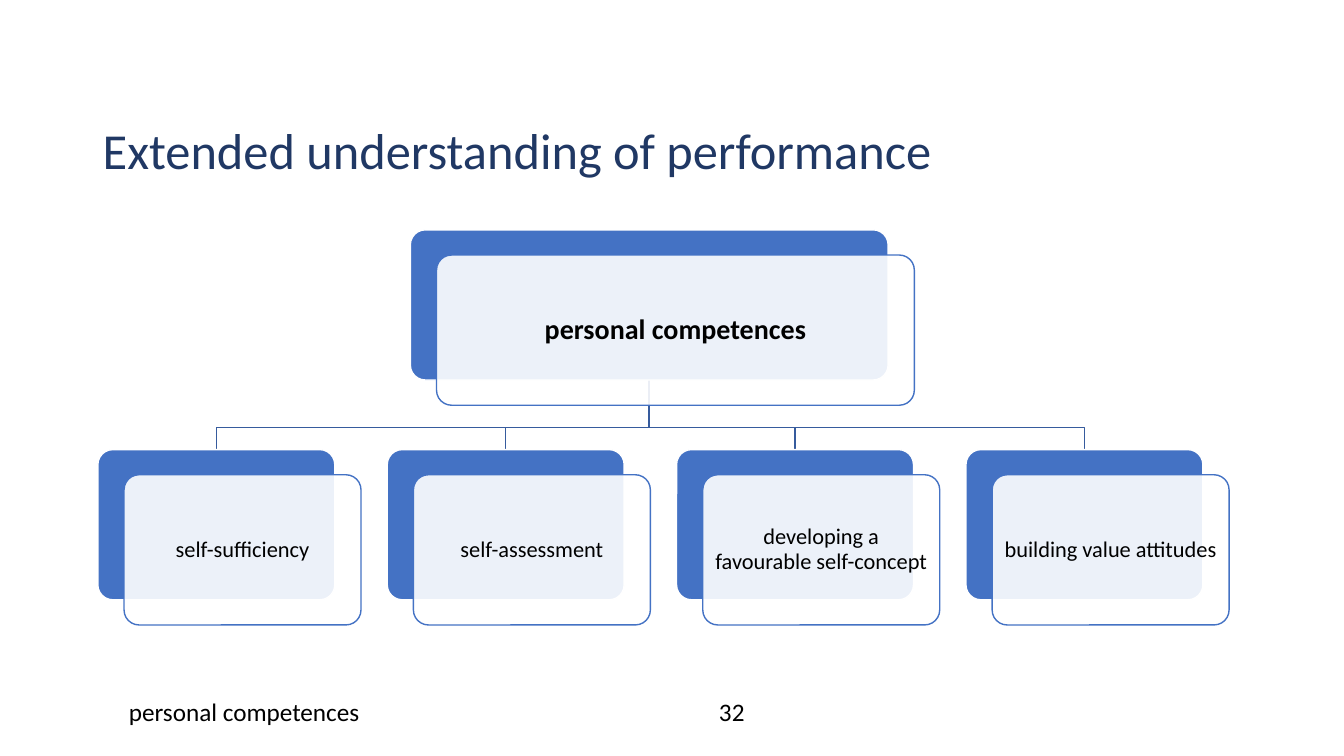
from dataclasses import dataclass

from lxml import etree
from pptx import Presentation, util as u
from pptx.dml.color import RGBColor
from pptx.enum import shapes, text
from pptx.oxml import ns


@dataclass(frozen=True)
class Theme:
    font: str = "Calibri"
    title: str = "203864"
    ink: str = "000000"
    accent: str = "4472C4"
    branch: str = "365B9D"
    paper: str = "FFFFFF"
    title_size: int = 36
    root_size: int = 20
    footer_size: int = 18
    leaf_size: int = 16
    panel_opacity: int = 90
    corner: float = 0.1
    line: int = 1


class SlideBuilder:
    """Draws on one slide; every length is a percentage of the slide's size."""

    def __init__(self, deck, theme):
        self.deck, self.theme = deck, theme
        self.page = deck.slides.add_slide(deck.slide_layouts[6])

    def x(self, share):
        return u.Emu(round(self.deck.slide_width * share / 100))

    def y(self, share):
        return u.Emu(round(self.deck.slide_height * share / 100))

    def area(self, left, top, width, height):
        return self.x(left), self.y(top), self.x(width), self.y(height)

    def set_words(self, frame, words, size, color, align, spacing=1.0, bold=False):
        frame.word_wrap = True
        para = frame.paragraphs[0]
        para.text = words
        para.alignment = align
        para.line_spacing = spacing
        para.font.name = self.theme.font
        para.font.size = u.Pt(size)
        para.font.bold = bold
        para.font.color.rgb = RGBColor.from_string(color)

    def label(self, area, words, size, color, align=text.PP_ALIGN.LEFT, spacing=1.0):
        box = self.page.shapes.add_textbox(*self.area(*area))
        self.set_words(box.text_frame, words, size, color, align, spacing)

    def outline(self, shape, color):
        shape.shadow.inherit = False
        shape.line.color.rgb = RGBColor.from_string(color)
        shape.line.width = u.Pt(self.theme.line)

    def rounded(self, area, fill, line):
        box = self.page.shapes.add_shape(
            shapes.MSO_SHAPE.ROUNDED_RECTANGLE, *self.area(*area))
        box.adjustments[0] = self.theme.corner
        box.fill.solid()
        box.fill.fore_color.rgb = RGBColor.from_string(fill)
        self.outline(box, line)
        return box

    def card(self, left, top, width, height, words, size, bold=False):
        """A solid block with a translucent text panel shifted over it."""
        theme = self.theme
        self.rounded((left, top, width, height), theme.accent, theme.paper)
        panel = self.rounded((left + SHIFT_X, top + SHIFT_Y, width, height),
                             theme.paper, theme.accent)
        # The first colour in the shape is its fill
        color = next(panel.element.iter(ns.qn("a:srgbClr")))
        etree.SubElement(color, ns.qn("a:alpha"), val=str(theme.panel_opacity * 1000))
        frame = panel.text_frame
        frame.margin_left = frame.margin_right = u.Inches(0.07)
        frame.margin_top = frame.margin_bottom = u.Inches(0.07)
        frame.vertical_anchor = text.MSO_ANCHOR.MIDDLE
        self.set_words(frame, words, size, theme.ink, text.PP_ALIGN.CENTER, 0.9, bold)

    def branch(self, start, bend, end):
        """An elbow line that runs down, across at the bend, and down again."""
        route = [start, (start[0], bend), (end[0], bend), end]
        points = [(self.x(across), self.y(down)) for across, down in route]
        builder = self.page.shapes.build_freeform(*points[0])
        builder.add_line_segments(points[1:], close=False)
        elbow = builder.convert_to_shape()
        elbow.fill.background()
        self.outline(elbow, self.theme.branch)


# Diagram grid, in percent of the slide
SHIFT_X, SHIFT_Y = 1.95, 3.33
CARD_HEIGHT = 19.87
ROOT_LEFT, ROOT_TOP, ROOT_WIDTH = 30.53, 30.4, 35.55
LEAF_LEFT, LEAF_TOP, LEAF_WIDTH, LEAF_STEP = 7.28, 59.47, 17.63, 21.53
BEND = 56.53

LEAVES = [
    "self-sufficiency",
    "self-assessment",
    "developing a favourable self-concept",
    "building value attitudes",
]


def main():
    deck = Presentation()
    deck.slide_width, deck.slide_height = u.Inches(13.33), u.Inches(7.5)
    theme = Theme()
    slide = SlideBuilder(deck, theme)

    # Title and footer
    slide.label((6.9, 16, 86.25, 12.93), "Extended understanding of performance",
                theme.title_size, theme.title, spacing=0.9)
    slide.label((8.85, 91.47, 33.75, 5.33), "personal competences",
                theme.footer_size, theme.ink)
    slide.label((43.2, 91.47, 22.5, 5.33), "32",
                theme.footer_size, theme.ink, text.PP_ALIGN.CENTER)

    # Branches lie behind the cards
    lefts = [LEAF_LEFT + LEAF_STEP * column for column in range(len(LEAVES))]
    root_foot = (ROOT_LEFT + ROOT_WIDTH / 2, ROOT_TOP + CARD_HEIGHT)
    for left in lefts:
        slide.branch(root_foot, BEND, (left + LEAF_WIDTH / 2, LEAF_TOP))

    # Cards
    slide.card(ROOT_LEFT, ROOT_TOP, ROOT_WIDTH, CARD_HEIGHT,
               "personal competences", theme.root_size, bold=True)
    for left, words in zip(lefts, LEAVES):
        slide.card(left, LEAF_TOP, LEAF_WIDTH, CARD_HEIGHT, words, theme.leaf_size)

    deck.save("out.pptx")


if __name__ == "__main__":
    main()
